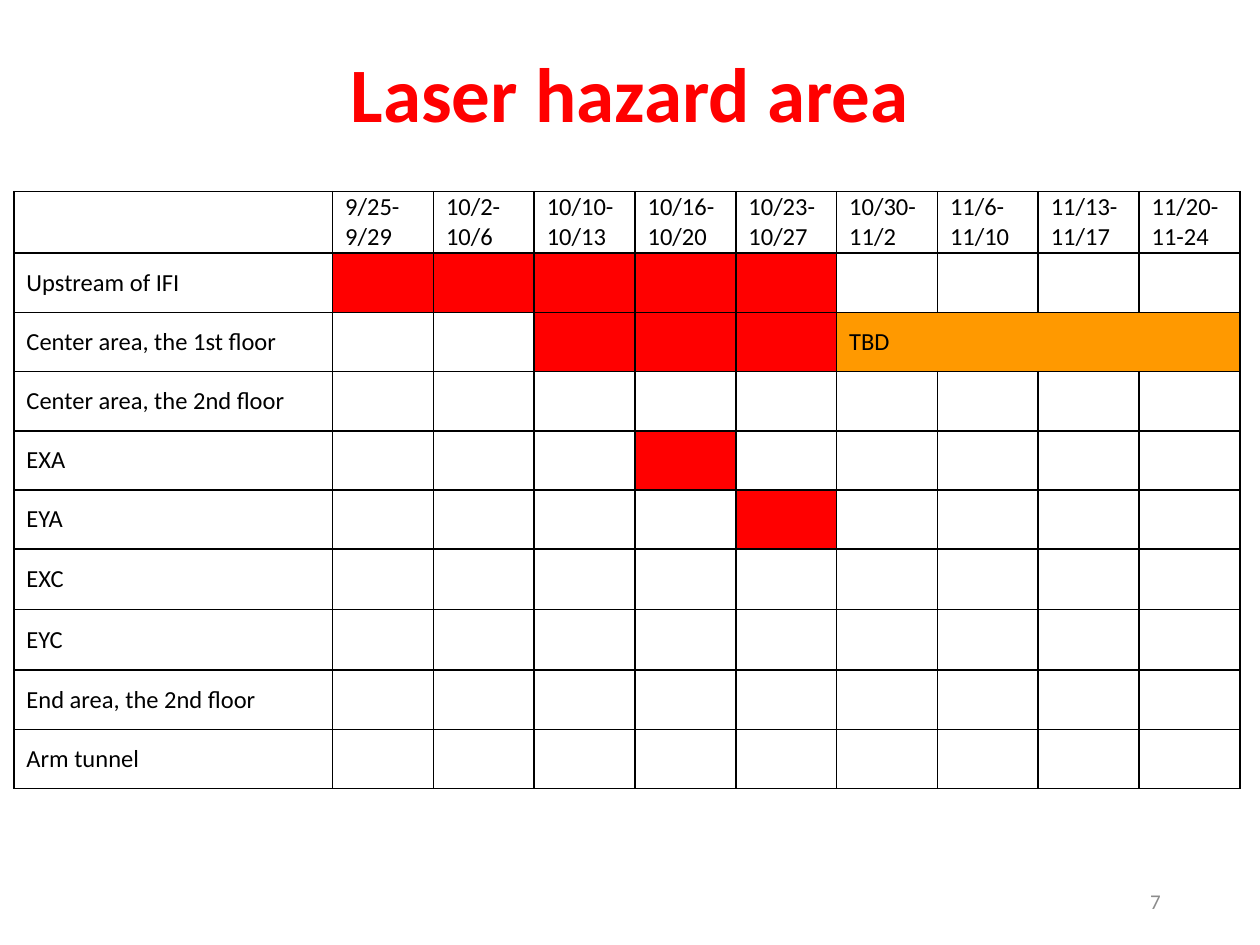
from dataclasses import dataclass

from lxml import etree
from pptx import Presentation
from pptx.dml.color import RGBColor
from pptx.enum.text import MSO_ANCHOR, PP_ALIGN
from pptx.oxml.ns import qn
from pptx.util import Inches, Pt

MIDDLE = MSO_ANCHOR.MIDDLE
CENTER, RIGHT, LEFT = PP_ALIGN.CENTER, PP_ALIGN.RIGHT, PP_ALIGN.LEFT


@dataclass(frozen=True)
class Theme:
    font: str = "Calibri"
    hazard: str = "FF0000"
    tbd: str = "FF9900"
    ink: str = "000000"
    muted: str = "8C8C8C"
    title_size: int = 44
    table_size: int = 14
    number_size: int = 12
    border: int = 1


THEME = Theme()

WEEKS = ["9/25-9/29", "10/2-10/6", "10/10-10/13", "10/16-10/20", "10/23-10/27",
         "10/30-11/2", "11/6-11/10", "11/13-11/17", "11/20-11-24"]

# Area, row height, week columns with a laser hazard
AREAS = [
    ("Upstream of IFI", 0.47, range(1, 6)),
    ("Center area, the 1st floor", 0.47, range(3, 6)),
    ("Center area, the 2nd floor", 0.47, ()),
    ("EXA", 0.47, (4,)),
    ("EYA", 0.47, (5,)),
    ("EXC", 0.48, ()),
    ("EYC", 0.48, ()),
    ("End area, the 2nd floor", 0.47, ()),
    ("Arm tunnel", 0.47, ()),
]
HEADER_HEIGHT = 0.49
AREA_WIDTH, WEEK_WIDTH = 2.53, 0.8
TBD_ROW, TBD_FIRST, TBD_LAST = 2, 6, 9


def add_run(p, text, size, color, bold=False):
    r = p.add_run()
    r.text = text
    r.font.name = THEME.font
    r.font.size = Pt(size)
    r.font.bold = bold
    r.font.color.rgb = RGBColor.from_string(color)


def add_text(s, box, text, size, color, align, bold=False, spacing=1.0):
    sp = s.shapes.add_textbox(*map(Inches, box))
    tf = sp.text_frame
    tf.word_wrap = True
    tf.vertical_anchor = MIDDLE
    p = tf.paragraphs[0]
    p.alignment = align
    p.line_spacing = spacing
    add_run(p, text, size, color, bold)


def set_borders(cell):
    tc_pr = cell._tc.get_or_add_tcPr()
    for side in ("a:lnL", "a:lnR", "a:lnT", "a:lnB"):
        ln = etree.SubElement(tc_pr, qn(side), w=str(Pt(THEME.border)))
        fill = etree.SubElement(ln, qn("a:solidFill"))
        etree.SubElement(fill, qn("a:srgbClr"), val=THEME.ink)


def set_fill(cell, color):
    cell.fill.solid()
    cell.fill.fore_color.rgb = RGBColor.from_string(color)


def format_cell(cell):
    cell.margin_left = cell.margin_right = Inches(0.1)
    cell.margin_top = cell.margin_bottom = 0
    cell.vertical_anchor = MIDDLE
    set_borders(cell)
    cell.fill.background()


def write_cell(cell, text):
    p = cell.text_frame.paragraphs[0]
    p.alignment = LEFT
    add_run(p, text, THEME.table_size, THEME.ink)


def add_schedule(s, left, top):
    widths = [AREA_WIDTH] + [WEEK_WIDTH] * len(WEEKS)
    heights = [HEADER_HEIGHT] + [height for _, height, _ in AREAS]
    frame = s.shapes.add_table(len(heights), len(widths), Inches(left), Inches(top),
                               Inches(sum(widths)), Inches(sum(heights)))
    table = frame.table
    table.first_row = table.horz_banding = False
    for column, width in zip(table.columns, widths):
        column.width = Inches(width)
    for row, height in zip(table.rows, heights):
        row.height = Inches(height)
    for cell in table.iter_cells():
        format_cell(cell)

    # Header weeks, then one row per area
    for col, week in enumerate(WEEKS, 1):
        write_cell(table.cell(0, col), week)
    for row, (area, _, hazard_weeks) in enumerate(AREAS, 1):
        write_cell(table.cell(row, 0), area)
        for col in hazard_weeks:
            set_fill(table.cell(row, col), THEME.hazard)

    # Undecided weeks
    tbd = table.cell(TBD_ROW, TBD_FIRST)
    tbd.merge(table.cell(TBD_ROW, TBD_LAST))
    set_fill(tbd, THEME.tbd)
    write_cell(tbd, "TBD")


def main():
    prs = Presentation()
    prs.slide_width, prs.slide_height = Inches(10), Inches(7.5)
    s = prs.slides.add_slide(prs.slide_layouts[6])

    # Title
    add_text(s, (0.69, 0, 8.62, 1.55), "Laser hazard area", THEME.title_size,
             THEME.hazard, CENTER, bold=True, spacing=0.9)
    # Page number
    add_text(s, (7.06, 6.95, 2.25, 0.4), "7", THEME.number_size, THEME.muted, RIGHT)
    # Schedule
    add_schedule(s, 0.11, 1.52)

    prs.save("out.pptx")


if __name__ == "__main__":
    main()
